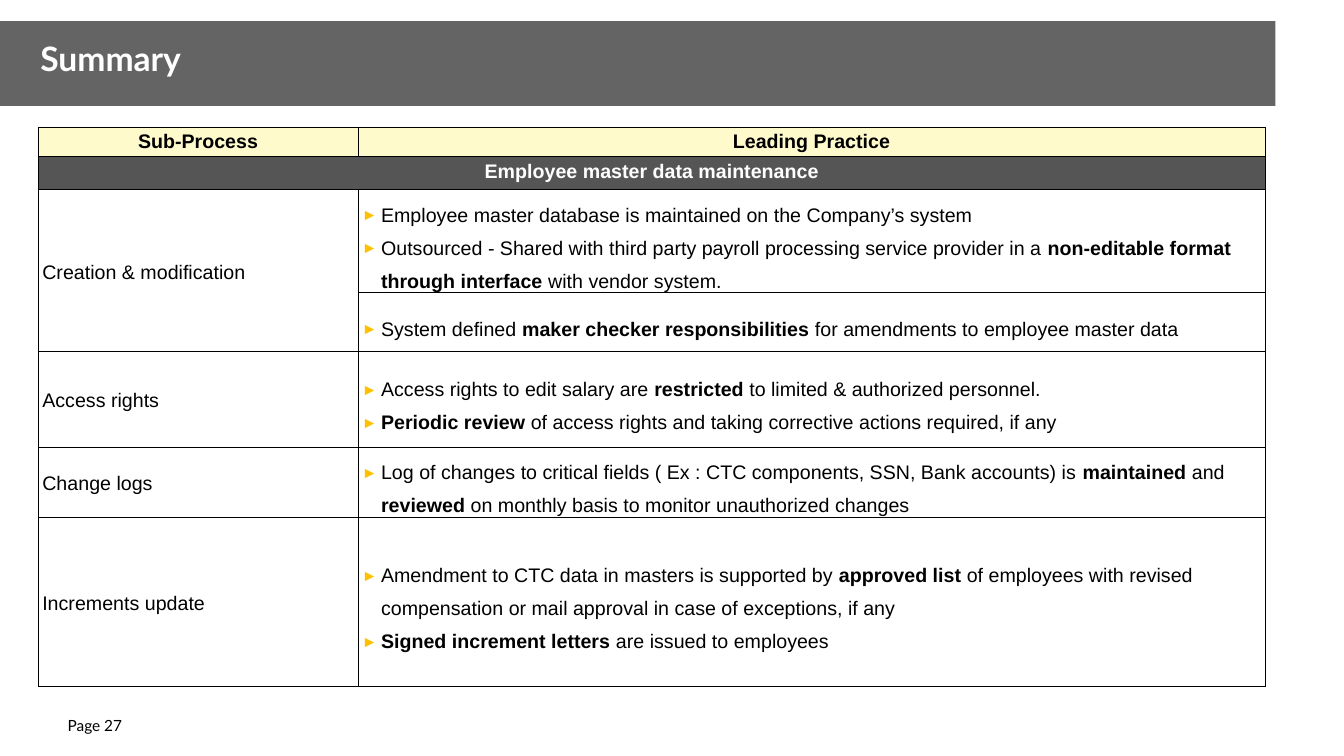
from lxml.etree import SubElement
from pptx import Presentation
from pptx.dml.color import RGBColor
from pptx.enum.shapes import MSO_SHAPE
from pptx.enum.text import MSO_ANCHOR, MSO_AUTO_SIZE, PP_ALIGN
from pptx.oxml.ns import qn
from pptx.util import Inches, Pt

COLUMN_WIDTHS = [3.17, 9]
ROW_HEIGHTS = [0.29, 0.33, 0.95, 0.58, 0.95, 0.61, 1.68]
HEADINGS = ["Sub-Process", "Leading Practice"]
SECTION = "Employee master data maintenance"
PRACTICES = [
    ("Creation & modification", [
        "Employee master database is maintained on the Company’s system",
        "Outsourced - Shared with third party payroll processing service provider in a "
        "**non-editable format through interface **with vendor system.",
    ]),
    (None, [
        "System defined **maker checker responsibilities **for amendments to employee master data",
    ]),
    ("Access rights", [
        "Access rights to edit salary are **restricted **to limited & authorized personnel.",
        "**Periodic review **of access rights and taking corrective actions required, if any",
    ]),
    ("Change logs", [
        "Log of changes to critical fields ( Ex : CTC components, SSN, Bank accounts) is "
        "**maintained **and **reviewed** on monthly basis to monitor unauthorized changes",
    ]),
    ("Increments update", [
        "Amendment to CTC data in masters is supported by **approved list **of employees with "
        "revised compensation or mail approval in case of exceptions, if any",
        "**Signed increment letters **are issued to employees",
    ]),
]


def color(value):
    """Turn a hex string into a colour."""
    return RGBColor.from_string(value)


def set_margins(target, left, top, right, bottom):
    """Set the four text margins of a cell or text frame in inches."""
    target.margin_left, target.margin_top = Inches(left), Inches(top)
    target.margin_right, target.margin_bottom = Inches(right), Inches(bottom)


def add_text(paragraph, text, font_name, size, text_color="000000", bold=False):
    """Add text to a paragraph, switching weight at each double asterisk."""
    for index, part in enumerate(text.split("**")):
        if part:
            run = paragraph.add_run()
            run.text = part
            run.font.name, run.font.size = font_name, Pt(size)
            run.font.bold = bold or index % 2 == 1
            run.font.color.rgb = color(text_color)


def add_bullet(paragraph):
    """Give a paragraph an amber arrowhead bullet and a hanging indent."""
    paragraph.line_spacing = 1.5
    properties = paragraph._p.get_or_add_pPr()
    properties.set("marL", str(Inches(0.19)))
    properties.set("indent", str(Inches(-0.19)))
    bullet_color = SubElement(properties, qn("a:buClr"))
    SubElement(bullet_color, qn("a:srgbClr"), val="FFC000")
    SubElement(properties, qn("a:buSzPct"), val="80000")
    SubElement(properties, qn("a:buFont"), typeface="Arial")
    SubElement(properties, qn("a:buChar"), char="►")


def set_borders(cell, outer_sides):
    """Draw black cell borders, heavier on the outer sides of the table."""
    properties = cell._tc.get_or_add_tcPr()
    for side in "LRTB":
        width = Pt(0.5 if side in outer_sides else 0.25)
        line = SubElement(properties, qn(f"a:ln{side}"), w=str(width))
        fill = SubElement(line, qn("a:solidFill"))
        SubElement(fill, qn("a:srgbClr"), val="000000")


def fill_heading(cell, text, fill_color, text_color="000000"):
    """Write a centred bold heading on a coloured cell."""
    cell.fill.solid()
    cell.fill.fore_color.rgb = color(fill_color)
    paragraph = cell.text_frame.paragraphs[0]
    paragraph.alignment = PP_ALIGN.CENTER
    add_text(paragraph, text, "Arial", 14, text_color, bold=True)


def add_header(slide, left, top, width, height):
    """Place the grey band and the slide title on it."""
    band = slide.shapes.add_shape(MSO_SHAPE.RECTANGLE, left, top, width, height)
    band.shadow.inherit = False
    band.fill.solid()
    band.fill.fore_color.rgb = color("646464")
    band.line.fill.background()
    title = slide.shapes.title
    band._element.addnext(title._element)
    title.left, title.top = left + Inches(0.4), top + Inches(0.23)
    title.width, title.height = Inches(12.17), height
    frame = title.text_frame
    set_margins(frame, 0, 0, 0, 0)
    frame.vertical_anchor = MSO_ANCHOR.TOP
    frame.auto_size = MSO_AUTO_SIZE.NONE
    paragraph = frame.paragraphs[0]
    paragraph.alignment = PP_ALIGN.LEFT
    paragraph.line_spacing = 0.85
    add_text(paragraph, "Summary", "Lato", 24, "FFFFFF", bold=True)


def add_practice_table(slide, left, top, width, height):
    """Place the table of leading practices."""
    last_row, last_column = len(ROW_HEIGHTS) - 1, len(COLUMN_WIDTHS) - 1
    frame = slide.shapes.add_table(last_row + 1, last_column + 1, left, top, width, height)
    table = frame.table
    table.first_row = table.horz_banding = False
    for column, column_width in zip(table.columns, COLUMN_WIDTHS):
        column.width = Inches(column_width)
    for row_index, row_height in enumerate(ROW_HEIGHTS):
        table.rows[row_index].height = Inches(row_height)
        for column_index, cell in enumerate(table.rows[row_index].cells):
            edges = {"L": column_index == 0, "R": column_index == last_column,
                     "T": row_index == 0, "B": row_index == last_row}
            set_borders(cell, [side for side, outer in edges.items() if outer])
            cell.fill.background()
            margin = 0.01 if row_index == 0 else 0.04
            set_margins(cell, margin, margin, margin, 0)
            cell.vertical_anchor = MSO_ANCHOR.TOP if row_index == 1 else MSO_ANCHOR.MIDDLE
    table.cell(1, 0).merge(table.cell(1, 1))
    table.cell(2, 0).merge(table.cell(3, 0))
    for column_index, heading in enumerate(HEADINGS):
        fill_heading(table.cell(0, column_index), heading, "FFFACC")
    fill_heading(table.cell(1, 0), SECTION, "555555", "FFFFFF")
    for row_index, (sub_process, practices) in enumerate(PRACTICES, start=2):
        if sub_process:
            label = table.cell(row_index, 0).text_frame.paragraphs[0]
            add_text(label, sub_process, "Arial", 14)
        text_frame = table.cell(row_index, 1).text_frame
        for index, practice in enumerate(practices):
            paragraph = text_frame.add_paragraph() if index else text_frame.paragraphs[0]
            add_bullet(paragraph)
            add_text(paragraph, practice, "Arial", 14)


def add_page_number(slide, left, top, width, height):
    """Place the page number."""
    frame = slide.shapes.add_textbox(left, top, width, height).text_frame
    frame.word_wrap = True
    set_margins(frame, 0, 0, 0, 0)
    add_text(frame.paragraphs[0], "Page 27", "Lato", 11)


def main():
    """Build and save the summary slide."""
    presentation = Presentation()
    presentation.slide_width, presentation.slide_height = Inches(13.33), Inches(7.5)
    slide = presentation.slides.add_slide(presentation.slide_layouts[5])
    add_header(slide, Inches(0), Inches(0.21), Inches(12.65), Inches(0.84))
    add_practice_table(slide, Inches(0.38), Inches(1.26),
                       Inches(sum(COLUMN_WIDTHS)), Inches(sum(ROW_HEIGHTS)))
    add_page_number(slide, Inches(0.67), Inches(7.1), Inches(1.05), Inches(0.22))
    presentation.save("out.pptx")


if __name__ == "__main__":
    main()
